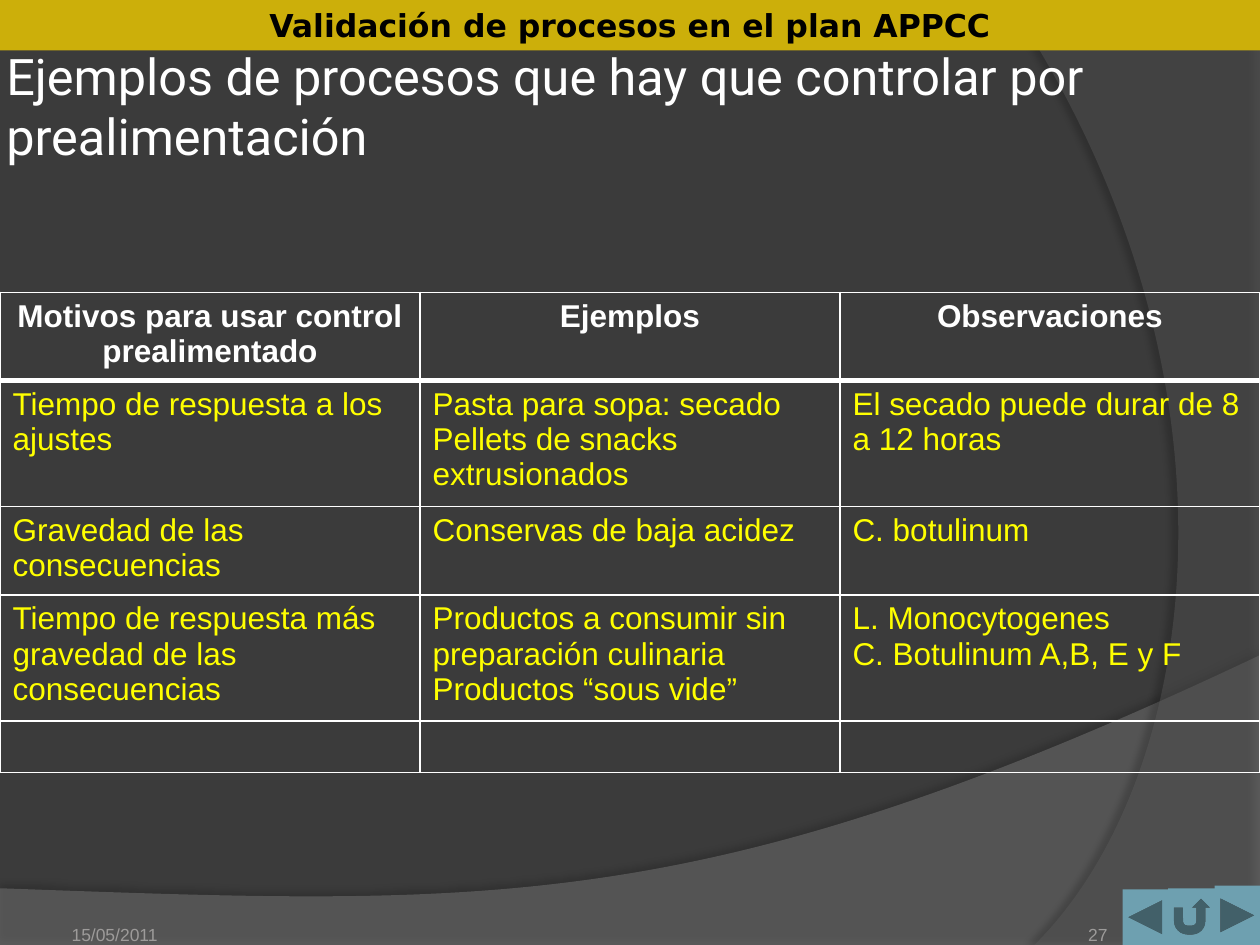
from lxml.etree import SubElement
from pptx import Presentation
from pptx.dml.color import RGBColor
from pptx.enum.shapes import MSO_SHAPE
from pptx.enum.text import MSO_ANCHOR, PP_ALIGN
from pptx.oxml.ns import qn
from pptx.util import Inches, Pt

WIDTH, HEIGHT = 10, 7.5
UNITS_PER_INCH = 1000
BLACK = RGBColor(0x00, 0x00, 0x00)
WHITE = RGBColor(0xFF, 0xFF, 0xFF)
YELLOW = RGBColor(0xFF, 0xFF, 0x00)
CHARCOAL = RGBColor(0x3B, 0x3B, 0x3B)
GOLD = RGBColor(0xCC, 0xAF, 0x0A)
TEAL = RGBColor(0x6E, 0xA0, 0xB0)
HILL_GREY = RGBColor(0x7F, 0x7F, 0x7F)
ARC_GREY = RGBColor(0x5E, 0x5E, 0x5E)
FOOTER_GREY = RGBColor(0x9D, 0x9B, 0x9A)

HILL = [(WIDTH, 5.2), (5.59, 7.29), (3.91, 7.19), (0, 7.05), (0, HEIGHT), (WIDTH, HEIGHT)]
ARC = [(8.21, HEIGHT), (9.53, 6.19), (WIDTH, 3), (8, 0), (WIDTH, 0), (WIDTH, HEIGHT)]
ROWS = [
    ["Motivos para usar control prealimentado", "Ejemplos", "Observaciones"],
    ["Tiempo de respuesta a los ajustes",
     "Pasta para sopa: secado\nPellets de snacks extrusionados",
     "El secado puede durar de 8 a 12 horas"],
    ["Gravedad de las consecuencias", "Conservas de baja acidez", "C. botulinum"],
    ["Tiempo de respuesta más gravedad de las consecuencias",
     "Productos a consumir sin preparación culinaria\nProductos “sous vide”",
     "L. Monocytogenes\nC. Botulinum A,B, E y F"],
    ["", "", ""],
]
BUTTONS = [
    (MSO_SHAPE.ACTION_BUTTON_BACK_OR_PREVIOUS, 8.91, 0.36, 0.44),
    (MSO_SHAPE.ACTION_BUTTON_RETURN, 9.27, 0.38, 0.45),
    (MSO_SHAPE.ACTION_BUTTON_FORWARD_OR_NEXT, 9.64, 0.36, 0.47),
]


def write(frame, text, size, color, font="Arial", bold=False, align=PP_ALIGN.LEFT):
    """Fill a text frame and format every run alike."""
    frame.text = text
    for paragraph in frame.paragraphs:
        paragraph.alignment = align
        paragraph.font.size = Pt(size)
        for run in paragraph.runs:
            run.font.size = Pt(size)
            run.font.name = font
            run.font.bold = bold
            run.font.color.rgb = color


def set_insets(frame, left, top, right, bottom):
    """Set the four inner margins in inches."""
    frame.margin_left, frame.margin_top = Inches(left), Inches(top)
    frame.margin_right, frame.margin_bottom = Inches(right), Inches(bottom)


def bend_first_segments(shape):
    """Merge the first three line segments of an outline into one cubic curve."""
    segments = list(shape._element.iter(qn("a:lnTo")))[:3]
    curve = segments[0]
    curve.tag = qn("a:cubicBezTo")
    for segment in segments[1:]:
        curve.append(segment[0])
        segment.getparent().remove(segment)


def add_swoosh(slide, points, color, opacity, shadow_opacity, distance, angle):
    """Draw a translucent background outline with a soft shadow."""
    units = [(round(x * UNITS_PER_INCH), round(y * UNITS_PER_INCH)) for x, y in points]
    builder = slide.shapes.build_freeform(*units[0], scale=Inches(1) / UNITS_PER_INCH)
    builder.add_line_segments(units[1:], close=True)
    swoosh = builder.convert_to_shape()
    bend_first_segments(swoosh)
    swoosh.line.fill.background()
    swoosh.fill.solid()
    swoosh.fill.fore_color.rgb = color
    tint = swoosh._element.spPr.find(qn("a:solidFill"))[0]
    SubElement(tint, qn("a:alpha"), val=str(opacity * 1000))
    swoosh.shadow.inherit = False
    effects = swoosh._element.spPr.find(qn("a:effectLst"))
    shadow = SubElement(effects, qn("a:outerShdw"), blurRad=str(Pt(4)),
                        dist=str(Pt(distance)), dir=str(angle * 60000),
                        algn="ctr", rotWithShape="0")
    shade = SubElement(shadow, qn("a:srgbClr"), val=str(BLACK))
    SubElement(shade, qn("a:alpha"), val=str(shadow_opacity * 1000))


def add_block(slide, preset, left, top, width, height, color):
    """Add a flat preset shape."""
    block = slide.shapes.add_shape(preset, Inches(left), Inches(top),
                                   Inches(width), Inches(height))
    block.fill.solid()
    block.fill.fore_color.rgb = color
    block.line.fill.background()
    block.shadow.inherit = False
    return block


def add_footer(slide, text, left, width, side_inset, align):
    """Add a small grey text resting on the bottom edge."""
    footer = slide.shapes.add_textbox(Inches(left), Inches(HEIGHT - 0.4),
                                      Inches(width), Inches(0.4))
    frame = footer.text_frame
    frame.word_wrap = True
    frame.vertical_anchor = MSO_ANCHOR.BOTTOM
    set_insets(frame, side_inset, 0, side_inset, 0)
    write(frame, text, 10, FOOTER_GREY, align=align)


def place_title(slide, text):
    """Place the title above the background shapes."""
    title = slide.shapes.title
    slide.shapes._spTree.append(title._element)
    title.left, title.top = Inches(0), Inches(0.42)
    title.width, title.height = Inches(WIDTH), Inches(0.83)
    frame = title.text_frame
    frame.word_wrap = True
    frame.vertical_anchor = MSO_ANCHOR.MIDDLE
    set_insets(frame, 0.05, 0.05, 0.05, 0.05)
    write(frame, text, 28.8, WHITE, font="Roboto")


def set_borders(cell, top, bottom):
    """Give a cell white borders, with top and bottom widths in points."""
    properties = cell._tc.get_or_add_tcPr()
    for side, width in (("L", 1), ("R", 1), ("T", top), ("B", bottom)):
        border = SubElement(properties, qn(f"a:ln{side}"), w=str(Pt(width)))
        fill = SubElement(border, qn("a:solidFill"))
        SubElement(fill, qn("a:srgbClr"), val=str(WHITE))


def add_process_table(slide):
    """Add the table of reasons, examples and remarks."""
    columns = len(ROWS[0])
    holder = slide.shapes.add_table(len(ROWS), columns, Inches(0), Inches(2.32),
                                    Inches(WIDTH), Inches(3.81))
    table = holder.table
    table.horz_banding = False
    for column in table.columns:
        column.width = Inches(WIDTH / columns)
    for index, texts in enumerate(ROWS):
        table.rows[index].height = Inches(0.41)
        header = index == 0
        for cell, text in zip(table.rows[index].cells, texts):
            set_borders(cell, top=3 if index == 1 else 1, bottom=3 if header else 1)
            cell.fill.background()
            write(cell.text_frame, text, 18, WHITE if header else YELLOW, bold=header,
                  align=PP_ALIGN.CENTER if header else PP_ALIGN.LEFT)
    holder.height = Inches(3.81)


def main():
    """Build and save the slide."""
    presentation = Presentation()
    presentation.slide_width, presentation.slide_height = Inches(WIDTH), Inches(HEIGHT)
    slide = presentation.slides.add_slide(presentation.slide_layouts[5])
    slide.background.fill.solid()
    slide.background.fill.fore_color.rgb = CHARCOAL

    add_swoosh(slide, HILL, HILL_GREY, 45, 35, 3.5, 270)
    add_swoosh(slide, ARC, ARC_GREY, 40, 45, 4, 180)
    banner = add_block(slide, MSO_SHAPE.RECTANGLE, 0, 0, WIDTH, 0.4, GOLD)
    write(banner.text_frame, "Validación de procesos en el plan APPCC", 18, BLACK,
          font="DejaVu Sans", bold=True, align=PP_ALIGN.CENTER)
    for preset, left, width, height in BUTTONS:
        add_block(slide, preset, left, HEIGHT - height, width, height, TEAL)

    place_title(slide, "Ejemplos de procesos que hay que controlar por prealimentación")
    add_footer(slide, "15/05/2011", 0.47, 2.33, 0.1, PP_ALIGN.LEFT)
    add_footer(slide, "27", 7.96, 0.83, 0, PP_ALIGN.RIGHT)
    add_process_table(slide)
    presentation.save("out.pptx")


if __name__ == "__main__":
    main()
